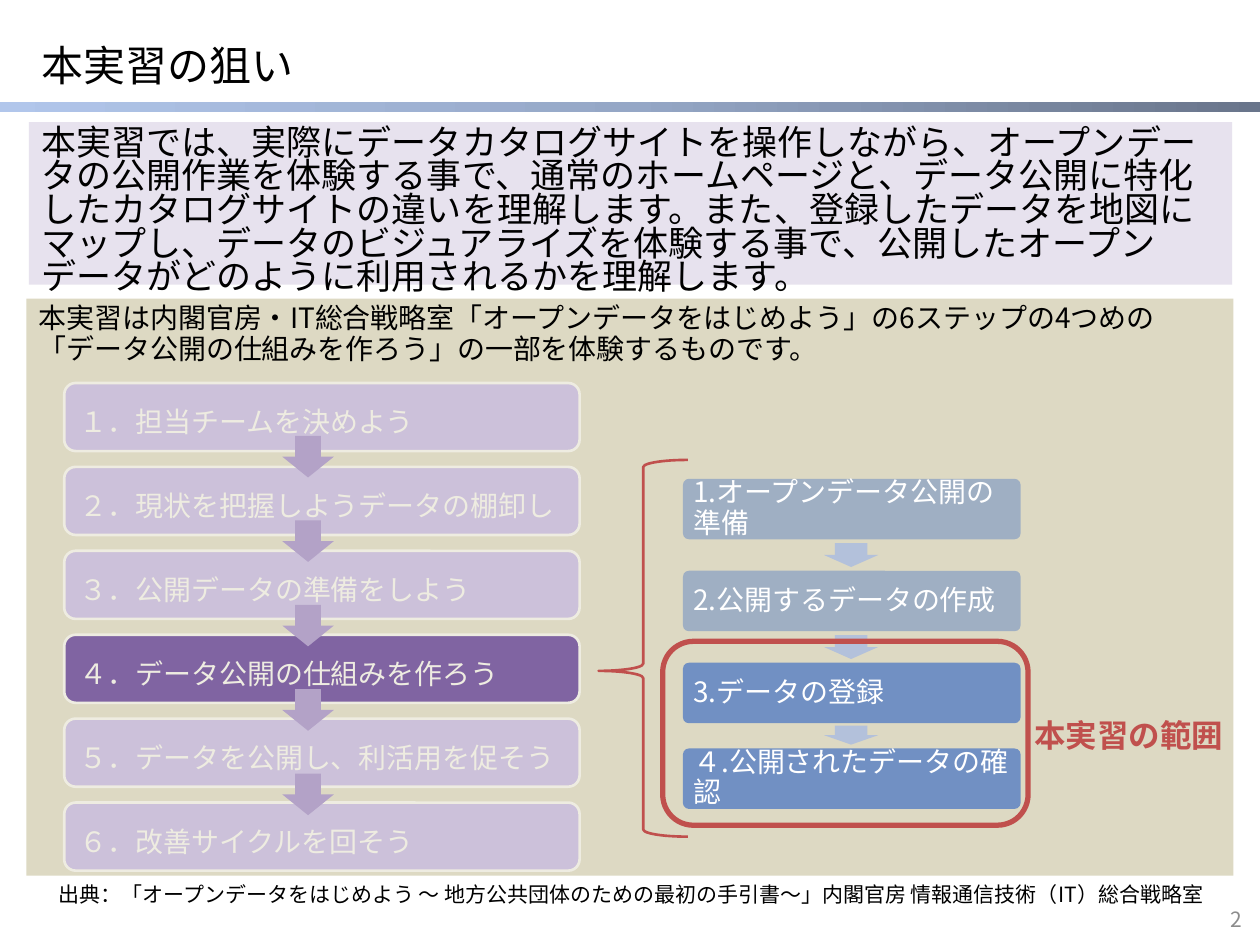
from copy import deepcopy

from lxml import etree
from pptx import Presentation
from pptx import util as u
from pptx.dml.color import RGBColor
from pptx.enum import shapes, text
from pptx.oxml.ns import qn

FONT = "Noto Sans CJK JP"
RED = "C0504D"
KIND = shapes.MSO_SHAPE
ALIGN = text.PP_ALIGN
TOP, MIDDLE = text.MSO_ANCHOR.TOP, text.MSO_ANCHOR.MIDDLE

prs = Presentation()
prs.slide_width, prs.slide_height = u.Inches(10), u.Inches(7.5)
slide = prs.slides.add_slide(prs.slide_layouts[6])


def add_block(kind, left, top, width, height, fill=None, alpha=100, line=None, weight=1.5):
    """Add a preset shape, or a text box when kind is None."""
    place = [u.Inches(v) for v in (left, top, width, height)]
    if kind is None:
        return slide.shapes.add_textbox(*place)
    block = slide.shapes.add_shape(kind, *place)
    block.shadow.inherit = False
    if fill:
        block.fill.solid()
        block.fill.fore_color.rgb = RGBColor.from_string(fill)
        if alpha < 100:
            color = block._element.spPr.find(".//" + qn("a:srgbClr"))
            etree.SubElement(color, qn("a:alpha")).set("val", str(alpha * 1000))
    else:
        block.fill.background()
    if line:
        block.line.color.rgb = RGBColor.from_string(line)
        block.line.width = u.Pt(weight)
    else:
        block.line.fill.background()
    return block


def write(block, words, size, color="000000", bold=False, align=ALIGN.LEFT,
          anchor=TOP, spacing=None, insets=(0.1, 0.05, 0.1, 0.05)):
    frame = block.text_frame
    frame.word_wrap = True
    frame.vertical_anchor = anchor
    (frame.margin_left, frame.margin_top,
     frame.margin_right, frame.margin_bottom) = [u.Inches(v) for v in insets]
    paragraph = frame.paragraphs[0]
    paragraph.alignment = align
    if spacing:
        paragraph.line_spacing = spacing
    run = paragraph.add_run()
    run.text = words
    run.font.size = u.Pt(size)
    run.font.bold = bold
    run.font.color.rgb = RGBColor.from_string(color)
    run.font.name = FONT
    etree.SubElement(run.font._element, qn("a:ea")).set("typeface", FONT)


# Gradient rule under the title
rule = add_block(KIND.RECTANGLE, 0, 0.81, 10, 0.08)
rule.fill.gradient()
rule.fill.gradient_angle = 0
stop_list = rule._element.spPr.find(".//" + qn("a:gsLst"))
stop_list.insert(1, deepcopy(stop_list[0]))
for stop, (position, color) in zip(
        rule.fill.gradient_stops, [(0, "B1C6EB"), (0.5, "95A7C6"), (1, "69758B")]):
    stop.position = position
    stop.color.rgb = RGBColor.from_string(color)

# Background panel, title, page number and aim
overview = add_block(KIND.RECTANGLE, 0.21, 2.37, 9.58, 4.58, "DDD9C3")
write(overview, "本実習は内閣官房・IT総合戦略室「オープンデータをはじめよう」の6ステップの4つめの"
      "「データ公開の仕組みを作ろう」の一部を体験するものです。", 16, spacing=0.9)

title = add_block(None, 0.23, 0.31, 8.27, 0.46)
write(title, "本実習の狙い", 24, anchor=MIDDLE, spacing=0.9)

page_number = add_block(None, 9.41, 7.14, 0.55, 0.31)
write(page_number, "2", 12, "8C8C8C", align=ALIGN.RIGHT, anchor=MIDDLE)

aim = add_block(KIND.RECTANGLE, 0.23, 0.97, 9.55, 1.29, "CCC1DA", alpha=46)
write(aim, "本実習では、実際にデータカタログサイトを操作しながら、オープンデータの公開作業を体験する事で、"
      "通常のホームページと、データ公開に特化したカタログサイトの違いを理解します。"
      "また、登録したデータを地図にマップし、データのビジュアライズを体験する事で、"
      "公開したオープンデータがどのように利用されるかを理解します。", 20, spacing=0.8)

# Tasks within step 4: label, top, opacity, then top and height of the arrow below
tasks = [
    ("1.オープンデータ公開の準備", 3.80, 40, (4.31, 0.19)),
    ("2.公開するデータの作成", 4.53, 40, (5.04, 0.19)),
    ("3.データの登録", 5.26, 70, (5.76, 0.15)),
    ("４.公開されたデータの確認", 5.94, 70, None),
]
for label, top, alpha, arrow in tasks:
    task = add_block(KIND.ROUNDED_RECTANGLE, 5.42, top, 2.68, 0.48, "4472C4", alpha)
    task.adjustments[0] = 0.1
    write(task, label, 16, "FFFFFF", anchor=MIDDLE, spacing=0.9, insets=[0.07] * 4)
    if arrow:
        task_arrow = add_block(KIND.DOWN_ARROW, 6.54, arrow[0], 0.43, arrow[1], "B3C1DB")
        task_arrow.adjustments[0] = 0.6
        task_arrow.adjustments[1] = 0.5

# Scope of this exercise
add_block(KIND.ROUNDED_RECTANGLE, 5.26, 5.09, 2.9, 1.46, line=RED, weight=3)
scope_label = add_block(None, 8.11, 5.63, 1.7, 0.4)
write(scope_label, "本実習の範囲", 18, RED, bold=True)

# Six steps, the fourth one highlighted
steps = [
    "１．担当チームを決めよう",
    "２．現状を把握しようデータの棚卸し",
    "３．公開データの準備をしよう",
    "４．データ公開の仕組みを作ろう",
    "５．データを公開し、利活用を促そう",
    "６．改善サイクルを回そう",
]
STEP_PITCH = (6.37 - 3.04) / 5
for i, label in enumerate(steps):
    step = add_block(KIND.ROUNDED_RECTANGLE, 0.51, 3.04 + i * STEP_PITCH, 4.09, 0.54,
                     "8064A2" if i == 3 else "CCC1DA", line="EEECE1")
    write(step, label, 16, "EEECE1", anchor=MIDDLE, insets=(0.1, 0.12, 0.1, 0.05))
for i in range(len(steps) - 1):
    add_block(KIND.DOWN_ARROW, 2.24, 3.46 + i * 0.67, 0.41, 0.33, "B3A2C7")

# Brace from step 4 to its tasks
brace = add_block(KIND.LEFT_BRACE, 4.75, 3.65, 0.71, 2.99, line=RED)
brace.adjustments[0] = 0.08
brace.adjustments[1] = 0.56

# Citation
citation = add_block(None, 0.2, 6.95, 9.45, 0.3)
write(citation, "出典：「オープンデータをはじめよう ～ 地方公共団体のための最初の手引書～」"
      "内閣官房 情報通信技術（IT）総合戦略室", 12, align=ALIGN.RIGHT)

prs.save("out.pptx")
